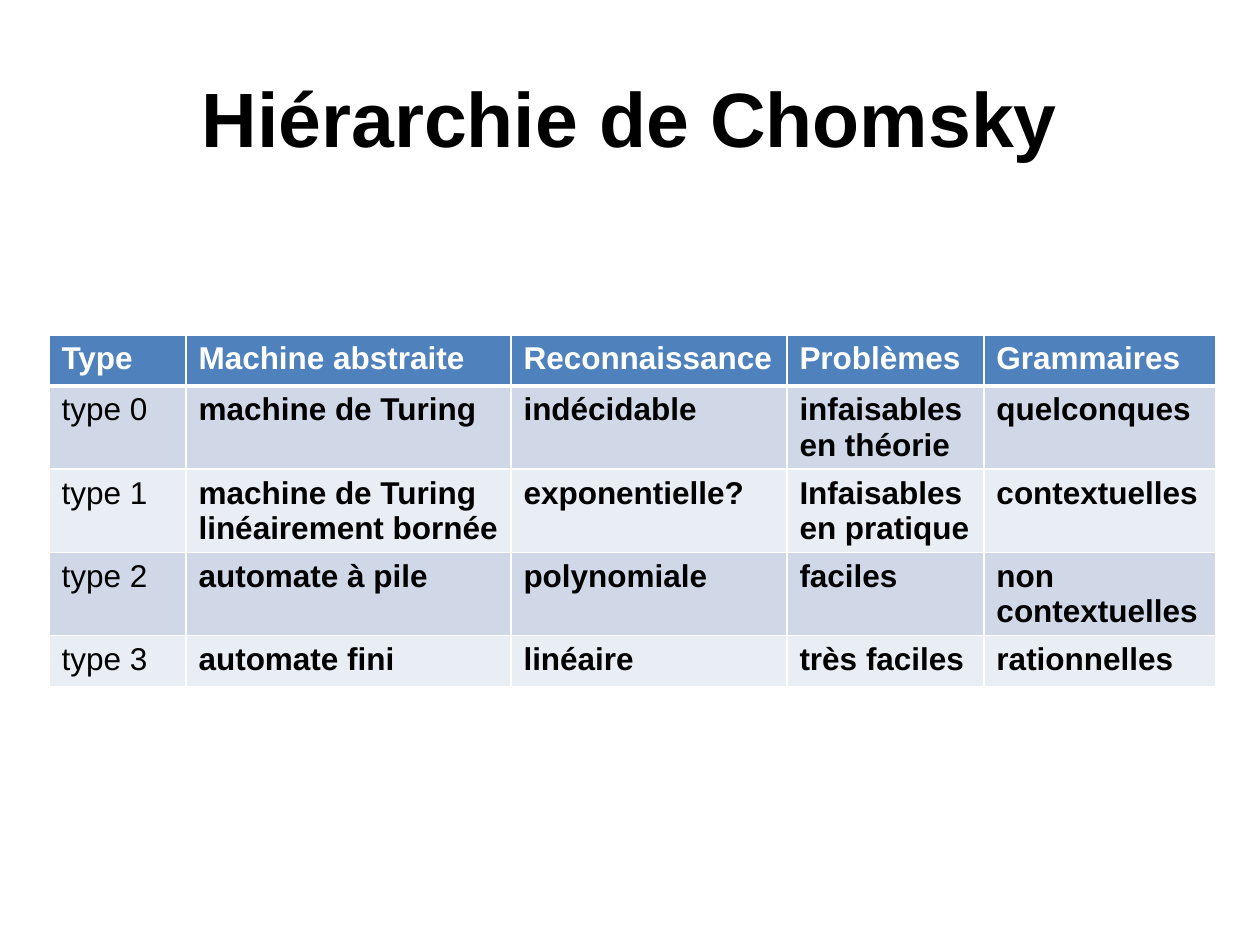
from lxml import etree
from pptx import Presentation
from pptx import util as u
from pptx.dml import color
from pptx.enum import text
from pptx.oxml import ns

PX = u.Inches(1) // 126
FONT = "Arial"
WHITE, BLACK = "FFFFFF", "000000"
HEADER_FILL = "4F81BD"
BAND_FILLS = ["D0D8E8", "E9EDF4"]
COLUMN_WIDTHS = [137, 325, 276, 197, 232]
ROW_HEIGHT = 51
HIERARCHY = [
    ["Type", "Machine abstraite", "Reconnaissance", "Problèmes", "Grammaires"],
    ["type 0", "machine de Turing", "indécidable", "infaisables en théorie", "quelconques"],
    ["type 1", "machine de Turing\nlinéairement bornée", "exponentielle?",
     "Infaisables en pratique", "contextuelles"],
    ["type 2", "automate à pile", "polynomiale", "faciles", "non contextuelles"],
    ["type 3", "automate fini", "linéaire", "très faciles", "rationnelles"],
]


def px(length):
    return u.Emu(length * PX)


def rgb(value):
    return color.RGBColor.from_string(value)


def style(paragraph, size, ink, bold):
    font = paragraph.font
    font.name, font.size, font.bold = FONT, u.Pt(size), bold
    font.color.rgb = rgb(ink)


def add_borders(cell, widths):
    properties = cell._tc.get_or_add_tcPr()
    for side, width in widths.items():
        line = etree.SubElement(properties, ns.qn(f"a:ln{side}"), w=str(u.Pt(width)))
        fill = etree.SubElement(line, ns.qn("a:solidFill"))
        etree.SubElement(fill, ns.qn("a:srgbClr"), val=WHITE)


def place_title(slide, left, top, width, height):
    title = slide.shapes.title
    title.left, title.top = px(left), px(top)
    title.width, title.height = px(width), px(height)
    frame = title.text_frame
    frame.vertical_anchor = text.MSO_ANCHOR.MIDDLE
    heading = frame.paragraphs[0]
    heading.text = "Hiérarchie de Chomsky"
    heading.alignment = text.PP_ALIGN.CENTER
    style(heading, 44, BLACK, True)


def fill_cell(cell, wording, row, column):
    is_header = row == 0
    add_borders(cell, {"L": 1, "R": 1, "T": 3 if row == 1 else 1, "B": 3 if is_header else 1})
    cell.fill.solid()
    cell.fill.fore_color.rgb = rgb(HEADER_FILL if is_header else BAND_FILLS[(row - 1) % 2])
    paragraph = cell.text_frame.paragraphs[0]
    paragraph.text = wording
    style(paragraph, 18, WHITE if is_header else BLACK, is_header or column > 0)


def place_hierarchy(slide, left, top):
    rows, columns = len(HIERARCHY), len(COLUMN_WIDTHS)
    table = slide.shapes.add_table(
        rows, columns, px(left), px(top), px(sum(COLUMN_WIDTHS)), px(rows * ROW_HEIGHT)
    ).table
    for column, width in zip(table.columns, COLUMN_WIDTHS):
        column.width = px(width)
    for row, wordings in enumerate(HIERARCHY):
        table.rows[row].height = px(ROW_HEIGHT)
        for column, wording in enumerate(wordings):
            fill_cell(table.cell(row, column), wording, row, column)


def main():
    deck = Presentation()
    deck.slide_width, deck.slide_height = px(1260), px(945)
    slide = deck.slides.add_slide(deck.slide_layouts[5])
    place_title(slide, 63, 38, 1134, 158)
    place_hierarchy(slide, 49, 335)
    deck.save("out.pptx")


if __name__ == "__main__":
    main()
